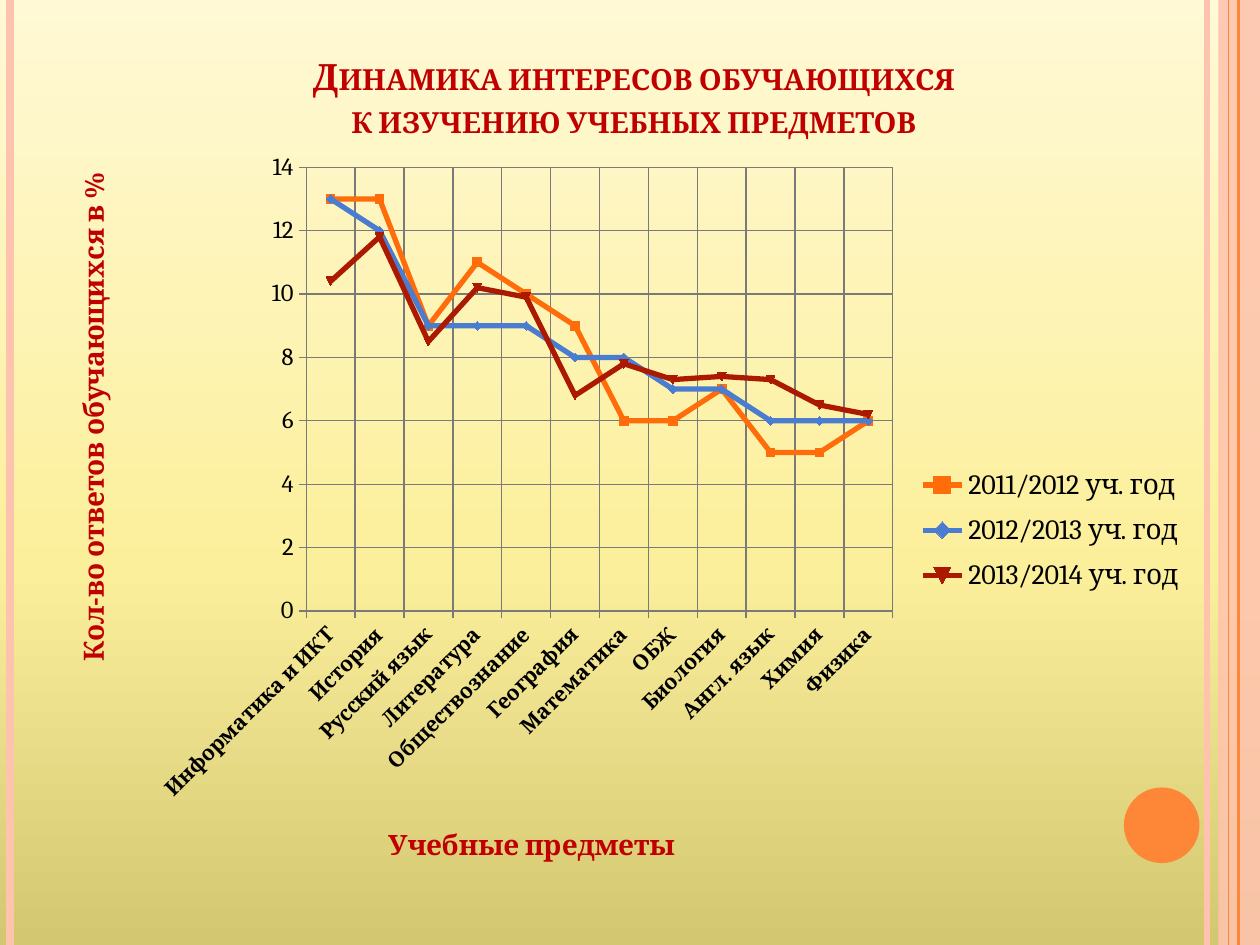
from copy import deepcopy
from lxml import etree
from pptx import Presentation
from pptx import util as u
from pptx.chart import data as chart_data
from pptx.dml.color import RGBColor
from pptx.enum import chart as ch, shapes, text
from pptx.oxml import ns

FONT = "Cambria"
RED, ORANGE, PINK, GREY = "C00000", "FE8637", "FEC3AE", "7A7A7A"
color = RGBColor.from_string


def write(frame, words, size, ink, bold=True, align=text.PP_ALIGN.CENTER):
    frame.text = words
    para = frame.paragraphs[0]
    para.alignment = align
    for span in para.runs:
        span.font.name = FONT
        span.font.size = u.Pt(size)
        span.font.bold = bold
        span.font.color.rgb = color(ink)
    return para


def place(element, index, inner=False, **shares):
    for old in element.findall(ns.qn("c:layout")):
        element.remove(old)
    layout = etree.Element(ns.qn("c:layout"))
    manual = etree.SubElement(layout, ns.qn("c:manualLayout"))
    if inner:
        etree.SubElement(manual, ns.qn("c:layoutTarget"), val="inner")
    for side in ("x", "y"):
        etree.SubElement(manual, ns.qn(f"c:{side}Mode"), val="edge")
    for name, share in shares.items():
        etree.SubElement(manual, ns.qn(f"c:{name}"), val=str(share))
    element.insert(index, layout)


deck = Presentation()
deck.slide_width, deck.slide_height = u.Inches(10), u.Inches(7.5)
page = deck.slides.add_slide(deck.slide_layouts[5])

fill = page.background.fill
fill.gradient()
fill.gradient_angle = 90
stop_list = page._element.xpath(".//a:gsLst")[0]
stop_list.append(deepcopy(stop_list[0]))
for stop, (position, tone) in zip(fill.gradient_stops, [(0, "D3C772"), (0.4, "FCEF9B"), (1, "FFF9D5")]):
    stop.position = position
    stop.color.rgb = color(tone)

band = page.shapes.add_shape(shapes.MSO_SHAPE.RECTANGLE, u.Inches(9.67), 0, u.Inches(0.33), deck.slide_height)
circle = page.shapes.add_shape(shapes.MSO_SHAPE.OVAL, u.Inches(8.92), u.Inches(6.25), u.Inches(0.6), u.Inches(0.6))
for shape, tone in [(band, PINK), (circle, ORANGE)]:
    shape.shadow.inherit = False
    shape.fill.solid()
    shape.fill.fore_color.rgb = color(tone)
    shape.line.fill.background()
band_color = band._element.spPr.xpath("./a:solidFill/a:srgbClr")[0]
etree.SubElement(band_color, ns.qn("a:alpha"), val="87000")

for x, tone, width in [(9.58, PINK, 3), (0.08, PINK, 4.5), (9.83, ORANGE, 1.5), (9.75, ORANGE, 0.75)]:
    stripe = page.shapes.add_connector(
        shapes.MSO_CONNECTOR.STRAIGHT, u.Inches(x), 0, u.Inches(x), deck.slide_height)
    stripe.line.color.rgb = color(tone)
    stripe.line.width = u.Pt(width)
    etree.SubElement(stripe._element.spPr, ns.qn("a:effectLst"))

title = page.shapes.title
title.left, title.top, title.width, title.height = [u.Inches(n) for n in (0.7, 0.33, 8.66, 0.84)]
heading = write(title.text_frame, "Динамика интересов обучающихся\vк изучению учебных предметов", 20.7, RED)
title.text_frame.vertical_anchor = text.MSO_ANCHOR.BOTTOM
title.text_frame.word_wrap = True
title.text_frame.auto_size = text.MSO_AUTO_SIZE.NONE
for span in heading.runs:
    span.font._element.set("cap", "small")

data = chart_data.CategoryChartData()
data.categories = [
    "Информатика и ИКТ", "История", "Русский язык", "Литература", "Обществознание", "География",
    "Математика", "ОБЖ", "Биология", "Англ. язык", "Химия", "Физика"]
years = [
    ("2011/2012 уч. год", "FF6C0A", [13, 13, 9, 11, 10, 9, 6, 6, 7, 5, 5, 6]),
    ("2012/2013 уч. год", "4A7CD0", [13, 12, 9, 9, 9, 8, 8, 7, 7, 6, 6, 6]),
    ("2013/2014 уч. год", "AB1A00", [10.4, 11.8, 8.5, 10.2, 9.9, 6.8, 7.8, 7.3, 7.4, 7.3, 6.5, 6.2])]
for name, tone, values in years:
    data.add_series(name, values)
chart = page.shapes.add_chart(
    ch.XL_CHART_TYPE.LINE_MARKERS, u.Inches(0.31), u.Inches(1.09), u.Inches(9.22), u.Inches(5.94), data).chart
chart.has_title = False
chart.font.name = FONT
chart.font.size = u.Pt(18)
chart.font.color.rgb = color("000000")
chart.plots[0].vary_by_categories = False
place(chart._chartSpace.chart.plotArea, 0, inner=True, x=0.23, y=0.04, w=0.505, h=0.593)

for series, (name, tone, values) in zip(chart.plots[0].series, years):
    series.smooth = False
    series.format.line.color.rgb = color(tone)
    series.format.line.width = u.Pt(3)
    series.marker.size = 5
    series.marker.format.fill.solid()
    series.marker.format.fill.fore_color.rgb = color(tone)
    series.marker.format.line.color.rgb = color(tone)

axes = [
    (chart.category_axis, "Учебные предметы", 12, True, "-2700000", "0", 0.296, 0.915),
    (chart.value_axis, "Кол-во ответов обучающихся в %", 14, False, "0", "-5400000", 0.027, 0.04)]
for axis, words, size, bold, label_turn, title_turn, x, y in axes:
    axis.has_major_gridlines = True
    for line in (axis.major_gridlines.format.line, axis.format.line):
        line.color.rgb = color(GREY)
        line.width = u.Pt(0.75)
    axis.major_tick_mark = ch.XL_TICK_MARK.CROSS
    labels = axis.tick_labels.font
    labels.name, labels.size, labels.bold = FONT, u.Pt(size), bold
    labels.color.rgb = color("000000")
    axis._element.xpath("./c:txPr/a:bodyPr")[0].set("rot", label_turn)
    write(axis.axis_title.text_frame, words, 16, RED)
    axis_title = axis.axis_title._element
    axis_title.xpath(".//a:bodyPr")[0].set("rot", title_turn)
    place(axis_title, 1, x=x, y=y)
chart.value_axis.minimum_scale = 0
chart.value_axis.maximum_scale = 14
chart.value_axis.major_unit = 2

chart.has_legend = True
legend = chart.legend
legend.position = ch.XL_LEGEND_POSITION.RIGHT
legend.include_in_layout = False
legend.font.name = FONT
legend.font.size = u.Pt(16)
legend.font.color.rgb = color("000000")
place(legend._element, 1, x=0.758, y=0.425, w=0.225, h=0.2)

deck.save("out.pptx")
